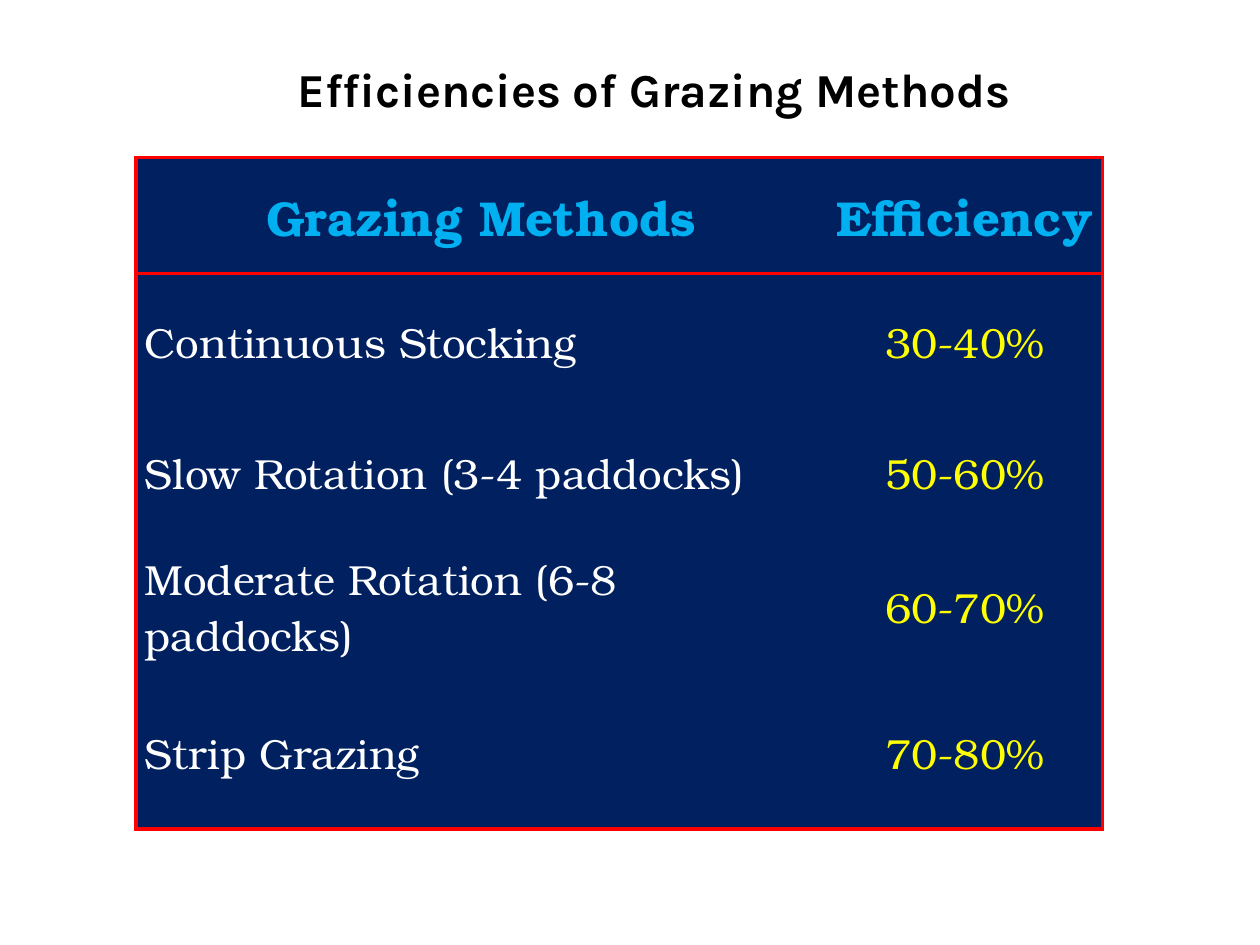
from dataclasses import dataclass

from lxml import etree
from pptx import Presentation
from pptx.dml.color import RGBColor
from pptx.enum import text
from pptx.oxml import ns
from pptx.util import Inches, Pt


@dataclass(frozen=True)
class Theme:
    """Colours, fonts and type sizes of the slide."""
    title_font: str = "Karla"
    table_font: str = "TeX Gyre Bonum"
    title_size: float = 27
    header_size: float = 28
    body_size: float = 24
    border_width: float = 2.25
    title_color: str = "000000"
    header_color: str = "00B0F0"
    method_color: str = "FFFFFF"
    efficiency_color: str = "FFFF00"
    fill: str = "002060"
    border: str = "FF0000"


THEME = Theme()
ROWS = [
    ("Grazing Methods", "Efficiency"),
    ("Continuous Stocking", "30-40%"),
    ("Slow Rotation (3-4 paddocks)", "50-60%"),
    ("Moderate Rotation (6-8 paddocks)", "60-70%"),
    ("Strip Grazing", "70-80%"),
]
COLUMN_WIDTHS = (5.48, 2.19)
ROW_HEIGHTS = (0.92, 1.08, 1.01, 1.11, 1.21)


def format_text(frame, content, font_name, size, color, bold, alignment):
    """Write one formatted paragraph into a text frame."""
    frame.text = content
    paragraph = frame.paragraphs[0]
    paragraph.alignment = alignment
    paragraph.space_before = Pt(0)
    font = paragraph.runs[0].font
    font.name, font.size, font.bold = font_name, Pt(size), bold
    font.color.rgb = RGBColor.from_string(color)


def set_borders(cell, visible_sides):
    """Draw the given sides of a cell (L, R, T, B) and clear the others."""
    properties = cell._tc.get_or_add_tcPr()
    for side in "LRTB":
        line = etree.SubElement(properties, ns.qn(f"a:ln{side}"))
        if side in visible_sides:
            line.set("w", str(Pt(THEME.border_width)))
            fill = etree.SubElement(line, ns.qn("a:solidFill"))
            etree.SubElement(fill, ns.qn("a:srgbClr"), val=THEME.border)
        else:
            etree.SubElement(line, ns.qn("a:noFill"))


def add_title(slide, box, content):
    """Place and format the title placeholder."""
    title = slide.shapes.title
    title.left, title.top, title.width, title.height = map(Inches, box)
    title.text_frame.vertical_anchor = text.MSO_ANCHOR.MIDDLE
    format_text(title.text_frame, content, THEME.title_font, THEME.title_size,
                THEME.title_color, True, text.PP_ALIGN.CENTER)


def format_cell(cell, content, row, column):
    """Fill one cell according to its place in the table."""
    header = row == 0
    sides = "R" if column else "L"
    sides += "T" if row < 2 else ""
    sides += "B" if row in (0, len(ROWS) - 1) else ""
    set_borders(cell, sides)
    cell.fill.solid()
    cell.fill.fore_color.rgb = RGBColor.from_string(THEME.fill)
    cell.vertical_anchor = text.MSO_ANCHOR.MIDDLE
    cell.margin_left = cell.margin_right = Inches(0.07)
    cell.margin_top = cell.margin_bottom = Inches(0.05)
    body_color = THEME.efficiency_color if column else THEME.method_color
    centered = header or column
    format_text(cell.text_frame, content, THEME.table_font,
                THEME.header_size if header else THEME.body_size,
                THEME.header_color if header else body_color, header,
                text.PP_ALIGN.CENTER if centered else text.PP_ALIGN.LEFT)


def add_efficiency_table(slide, box):
    """Add the table of grazing methods and their efficiencies."""
    table = slide.shapes.add_table(len(ROWS), len(COLUMN_WIDTHS), *map(Inches, box)).table
    table.horz_banding = False
    for column, width in zip(table.columns, COLUMN_WIDTHS):
        column.width = Inches(width)
    for row, height in zip(table.rows, ROW_HEIGHTS):
        row.height = Inches(height)
    for row, values in enumerate(ROWS):
        for column, content in enumerate(values):
            format_cell(table.cell(row, column), content, row, column)


def main():
    """Build and save the presentation."""
    presentation = Presentation()
    presentation.slide_width, presentation.slide_height = Inches(10), Inches(7.5)
    slide = presentation.slides.add_slide(presentation.slide_layouts[5])
    add_title(slide, (2, 0.08, 6.38, 1.25), "Efficiencies of Grazing Methods")
    add_efficiency_table(slide, (1.08, 1.25, sum(COLUMN_WIDTHS), sum(ROW_HEIGHTS)))
    presentation.save("out.pptx")


if __name__ == "__main__":
    main()
